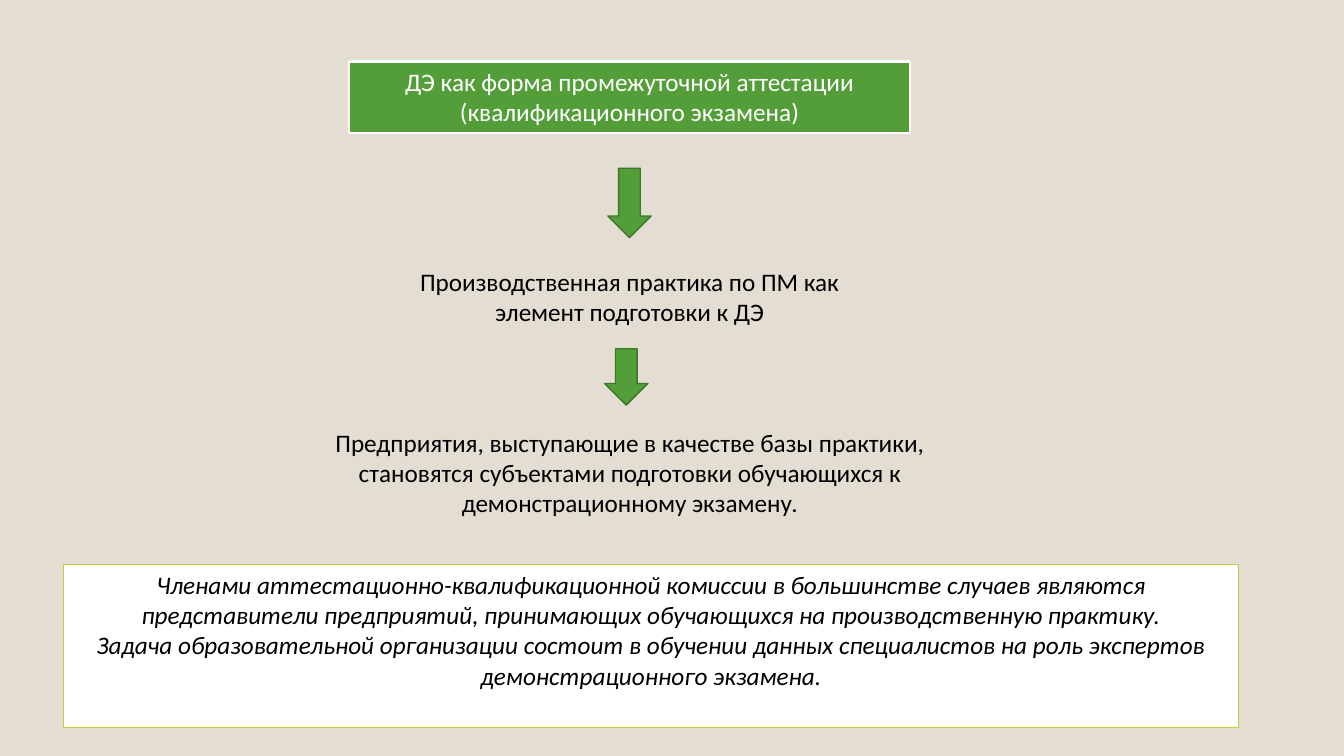
from pptx import Presentation
from pptx import util as u
from pptx.dml.color import RGBColor
from pptx.enum import shapes, text

BEIGE = RGBColor(0xE3, 0xDE, 0xD1)
GREEN = RGBColor(0x54, 0x9E, 0x39)
DARK_GREEN = RGBColor(0x3E, 0x75, 0x2A)
LIME = RGBColor(0xC0, 0xCF, 0x3A)
WHITE = RGBColor(0xFF, 0xFF, 0xFF)
BLACK = RGBColor(0x00, 0x00, 0x00)


def place(box):
    return [u.Cm(length) for length in box]


def write(shape, lines, color=BLACK, italic=False):
    frame = shape.text_frame
    frame.word_wrap = True
    frame.vertical_anchor = text.MSO_ANCHOR.TOP
    frame.text = "\n".join(lines)
    for paragraph in frame.paragraphs:
        paragraph.alignment = text.PP_ALIGN.CENTER
        paragraph.font.name = "Calibri"
        paragraph.font.size = u.Pt(18)
        paragraph.font.italic = italic
        paragraph.font.color.rgb = color


def add_filled_shape(slide, kind, box, fill, line, width=1):
    shape = slide.shapes.add_shape(kind, *place(box))
    shape.shadow.inherit = False
    shape.fill.solid()
    shape.fill.fore_color.rgb = fill
    shape.line.color.rgb = line
    shape.line.width = u.Pt(width)
    return shape


def add_down_arrow(slide, left, top, height):
    add_filled_shape(slide, shapes.MSO_SHAPE.DOWN_ARROW,
                     (left, top, 1.09, height), GREEN, DARK_GREEN)


def add_step(slide, box, line):
    write(slide.shapes.add_textbox(*place(box)), [line])


def main():
    """Build the slide on the demonstration exam and save it."""
    presentation = Presentation()
    presentation.slide_width = u.Cm(33.87)
    presentation.slide_height = u.Cm(19.05)
    slide = presentation.slides.add_slide(presentation.slide_layouts[6])
    slide.background.fill.solid()
    slide.background.fill.fore_color.rgb = BEIGE

    exam = add_filled_shape(slide, shapes.MSO_SHAPE.RECTANGLE,
                            (8.79, 1.55, 14.15, 1.8), GREEN, WHITE, 1.5)
    write(exam, ["ДЭ как форма промежуточной аттестации (квалификационного экзамена)"], WHITE)
    add_down_arrow(slide, 15.32, 4.24, 1.75)
    add_step(slide, (9.47, 6.58, 12.8, 1.8),
             "Производственная практика по ПМ как элемент подготовки к ДЭ")
    add_down_arrow(slide, 15.24, 8.79, 1.42)
    add_step(slide, (7.72, 10.64, 16.31, 2.57),
             "Предприятия, выступающие в качестве базы практики, становятся "
             "субъектами подготовки обучающихся к демонстрационному экзамену.")

    commission = add_filled_shape(slide, shapes.MSO_SHAPE.RECTANGLE,
                                  (1.6, 14.22, 29.62, 4.11), WHITE, LIME)
    write(commission, [
        "Членами аттестационно-квалификационной комиссии в большинстве случаев являются "
        "представители предприятий, принимающих обучающихся на производственную практику.",
        "Задача образовательной организации состоит в обучении данных специалистов "
        "на роль экспертов демонстрационного экзамена.",
    ], italic=True)
    presentation.save("out.pptx")


if __name__ == "__main__":
    main()
